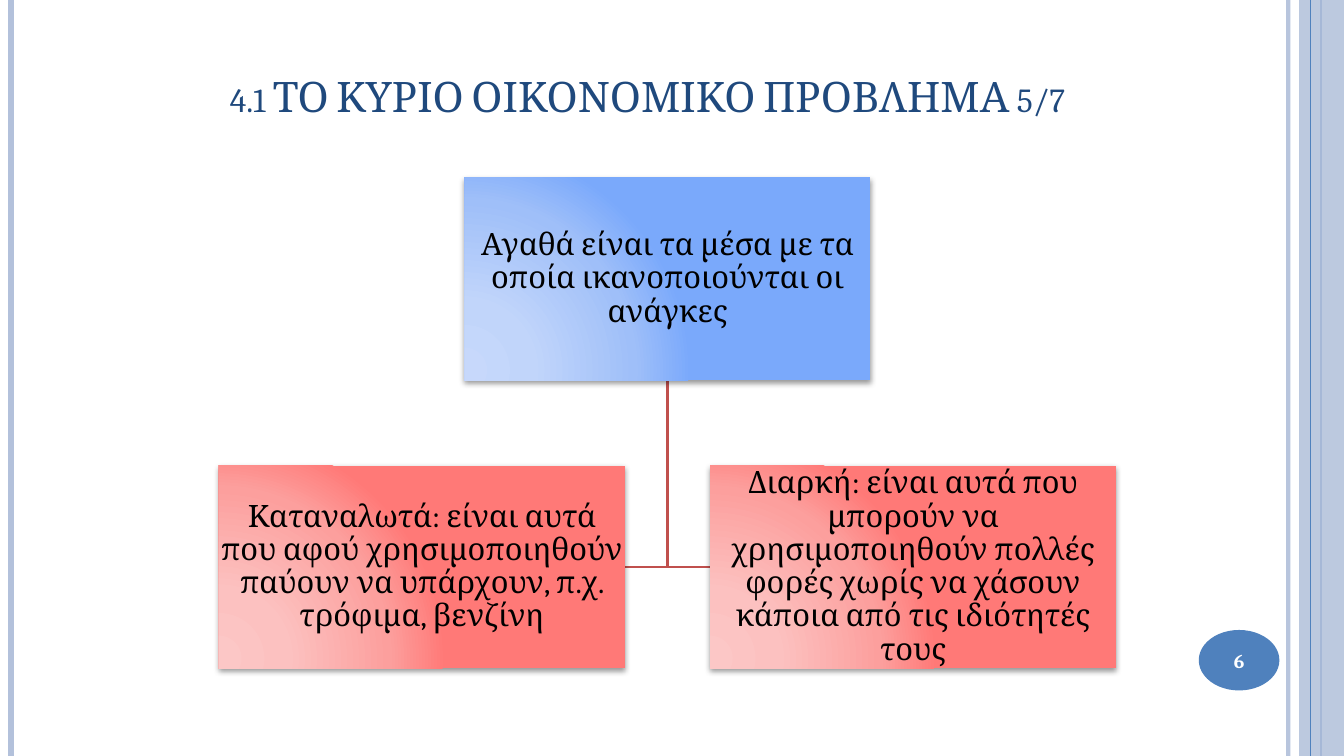
from dataclasses import dataclass

from lxml import etree
from pptx import Presentation
from pptx.dml.color import RGBColor
from pptx.enum.shapes import MSO_SHAPE
from pptx.enum.text import MSO_ANCHOR, MSO_AUTO_SIZE, PP_ALIGN
from pptx.oxml import parse_xml
from pptx.oxml.ns import qn
from pptx.util import Pt

RECTANGLE, OVAL = MSO_SHAPE.RECTANGLE, MSO_SHAPE.OVAL
CENTER, LEFT = PP_ALIGN.CENTER, PP_ALIGN.LEFT
MIDDLE, BOTTOM = MSO_ANCHOR.MIDDLE, MSO_ANCHOR.BOTTOM
NO_AUTOFIT = MSO_AUTO_SIZE.NONE
DRAWING_NS = "http://schemas.openxmlformats.org/drawingml/2006/main"

SLIDE_WIDTH, SLIDE_HEIGHT = 960, 540
BOX_WIDTH, BOX_HEIGHT = 290, 145
CENTER_X, SIBLING_GAP = 476.8, 60.8
PARENT_TOP, CHILD_TOP = 126.7, 332.5


@dataclass(frozen=True)
class Theme:
    font: str = "Cambria"
    title_size: float = 30
    box_size: float = 22
    number_size: float = 14
    title: str = "1F497D"
    text: str = "000000"
    white: str = "FFFFFF"
    accent: str = "4F81BD"
    pale: str = "B3C1DB"
    branch: str = "C0504D"
    blues: tuple[str, ...] = ("C7D8FB", "C1D5FA", "9FBFF9", "7AA9FB")
    reds: tuple[str, ...] = ("FCC7C6", "FCC1C0", "FC9F9D", "FF7977")
    gradient_stops: tuple[int, ...] = (0, 30, 75, 100)


@dataclass(frozen=True)
class Stripe:
    x: float
    color: str
    width: float
    opacity: int = 100


@dataclass(frozen=True)
class Box:
    left: float
    top: float
    colors: tuple[str, ...]
    text: str


THEME = Theme()
STRIPES = [
    Stripe(920.2, THEME.pale, 3, 93),
    Stripe(7.9, THEME.pale, 4.5),
    Stripe(943.9, THEME.accent, 1.5),
]
FRONT_STRIPE = Stripe(936, THEME.accent, 0.75)
BOXES = [
    Box(CENTER_X - BOX_WIDTH / 2, PARENT_TOP, THEME.blues,
        "Αγαθά είναι τα μέσα με τα οποία ικανοποιούνται οι ανάγκες"),
    Box(CENTER_X - SIBLING_GAP / 2 - BOX_WIDTH, CHILD_TOP, THEME.reds,
        "Καταναλωτά: είναι αυτά που αφού χρησιμοποιηθούν παύουν να υπάρχουν, "
        "π.χ. τρόφιμα, βενζίνη"),
    Box(CENTER_X + SIBLING_GAP / 2, CHILD_TOP, THEME.reds,
        "Διαρκή: είναι αυτά που μπορούν να χρησιμοποιηθούν πολλές φορές χωρίς "
        "να χάσουν κάποια από τις ιδιότητές τους"),
]


def set_opacity(owner, percent: int) -> None:
    """Make the first solid colour inside an element partly transparent."""
    color = next(owner.iter(qn("a:srgbClr")))
    etree.SubElement(color, qn("a:alpha")).set("val", str(percent * 1000))


def write(shape, text: str, size: float, color: str, align=CENTER,
          anchor=MIDDLE, bold: bool = False):
    frame = shape.text_frame
    frame.text = text
    frame.word_wrap = True
    frame.auto_size = NO_AUTOFIT
    frame.vertical_anchor = anchor
    paragraph = frame.paragraphs[0]
    paragraph.alignment = align
    run = paragraph.runs[0]
    run.font.name = THEME.font
    run.font.size = Pt(size)
    run.font.bold = bold
    run.font.color.rgb = RGBColor.from_string(color)
    return run


def add_solid(slide, kind, left: float, top: float, width: float,
              height: float, color: str):
    shape = slide.shapes.add_shape(kind, Pt(left), Pt(top), Pt(width), Pt(height))
    shape.shadow.inherit = False
    shape.fill.solid()
    shape.fill.fore_color.rgb = RGBColor.from_string(color)
    shape.line.fill.background()
    return shape


def add_stripe(slide, stripe: Stripe) -> None:
    line = slide.shapes.add_connector(
        1, Pt(stripe.x), 0, Pt(stripe.x), Pt(SLIDE_HEIGHT))
    line.line.color.rgb = RGBColor.from_string(stripe.color)
    line.line.width = Pt(stripe.width)
    properties = line._element.spPr
    if stripe.opacity < 100:
        set_opacity(properties, stripe.opacity)
    etree.SubElement(properties, qn("a:effectLst"))


def add_branch(slide, child_edge: float) -> None:
    """Draw the elbow from the parent box to the inner side of a child."""
    elbow_y = CHILD_TOP + BOX_HEIGHT / 2
    outline = slide.shapes.build_freeform(
        Pt(CENTER_X), Pt(PARENT_TOP + BOX_HEIGHT))
    outline.add_line_segments(
        [(Pt(CENTER_X), Pt(elbow_y)), (Pt(child_edge), Pt(elbow_y))], close=False)
    branch = outline.convert_to_shape()
    branch.shadow.inherit = False
    branch.fill.background()
    branch.line.color.rgb = RGBColor.from_string(THEME.branch)
    branch.line.width = Pt(2)


def apply_glow_gradient(shape, colors: tuple[str, ...]) -> None:
    """Fill with a circular gradient that is lightest at the lower left."""
    stops = "".join(
        f'<a:gs pos="{position * 1000}"><a:srgbClr val="{color}"/></a:gs>'
        for position, color in zip(THEME.gradient_stops, colors))
    gradient = parse_xml(
        f'<a:gradFill xmlns:a="{DRAWING_NS}" rotWithShape="1">'
        f'<a:gsLst>{stops}</a:gsLst><a:path path="circle">'
        '<a:fillToRect l="5000" t="100000" r="120000" b="10000"/>'
        '</a:path></a:gradFill>')
    properties = shape._element.spPr
    properties.replace(properties.find(qn("a:solidFill")), gradient)


def apply_shadow(shape) -> None:
    effects = shape._element.spPr.find(qn("a:effectLst"))
    effects.append(parse_xml(
        f'<a:outerShdw xmlns:a="{DRAWING_NS}" blurRad="{Pt(4)}" dist="{Pt(2)}" '
        'dir="5400000" rotWithShape="0"><a:srgbClr val="000000">'
        '<a:alpha val="40000"/></a:srgbClr></a:outerShdw>'))


def add_box(slide, box: Box) -> None:
    shape = add_solid(slide, RECTANGLE, box.left, box.top, BOX_WIDTH, BOX_HEIGHT,
                      box.colors[-1])
    apply_glow_gradient(shape, box.colors)
    apply_shadow(shape)
    write(shape, box.text, THEME.box_size, THEME.text)
    frame = shape.text_frame
    frame.margin_left = frame.margin_right = Pt(1.1)
    frame.margin_top = frame.margin_bottom = Pt(1.1)
    frame.paragraphs[0].line_spacing = 0.9


def format_title(title) -> None:
    title.left, title.top, title.width, title.height = (
        Pt(157), Pt(0), Pt(659), Pt(90))
    run = write(title, "4.1 ΤΟ ΚΥΡΙΟ ΟΙΚΟΝΟΜΙΚΟ ΠΡΟΒΛΗΜΑ 5/7",
                THEME.title_size, THEME.title, LEFT, BOTTOM)
    run.font._element.set("cap", "small")


def main() -> None:
    deck = Presentation()
    deck.slide_width, deck.slide_height = Pt(SLIDE_WIDTH), Pt(SLIDE_HEIGHT)
    slide = deck.slides.add_slide(deck.slide_layouts[5])
    format_title(slide.shapes.title)

    for stripe in STRIPES:
        add_stripe(slide, stripe)
    side_band = add_solid(slide, RECTANGLE, 928, 0, 32, SLIDE_HEIGHT, THEME.pale)
    set_opacity(side_band._element.spPr, 87)
    add_stripe(slide, FRONT_STRIPE)
    page_badge = add_solid(slide, OVAL, 856.3, 450, 57.6, 43.2, THEME.accent)
    write(page_badge, "6", THEME.number_size, THEME.white, bold=True)

    for side in (1, -1):
        add_branch(slide, CENTER_X + side * SIBLING_GAP / 2)
    for box in BOXES:
        add_box(slide, box)
    deck.save("out.pptx")


if __name__ == "__main__":
    main()
